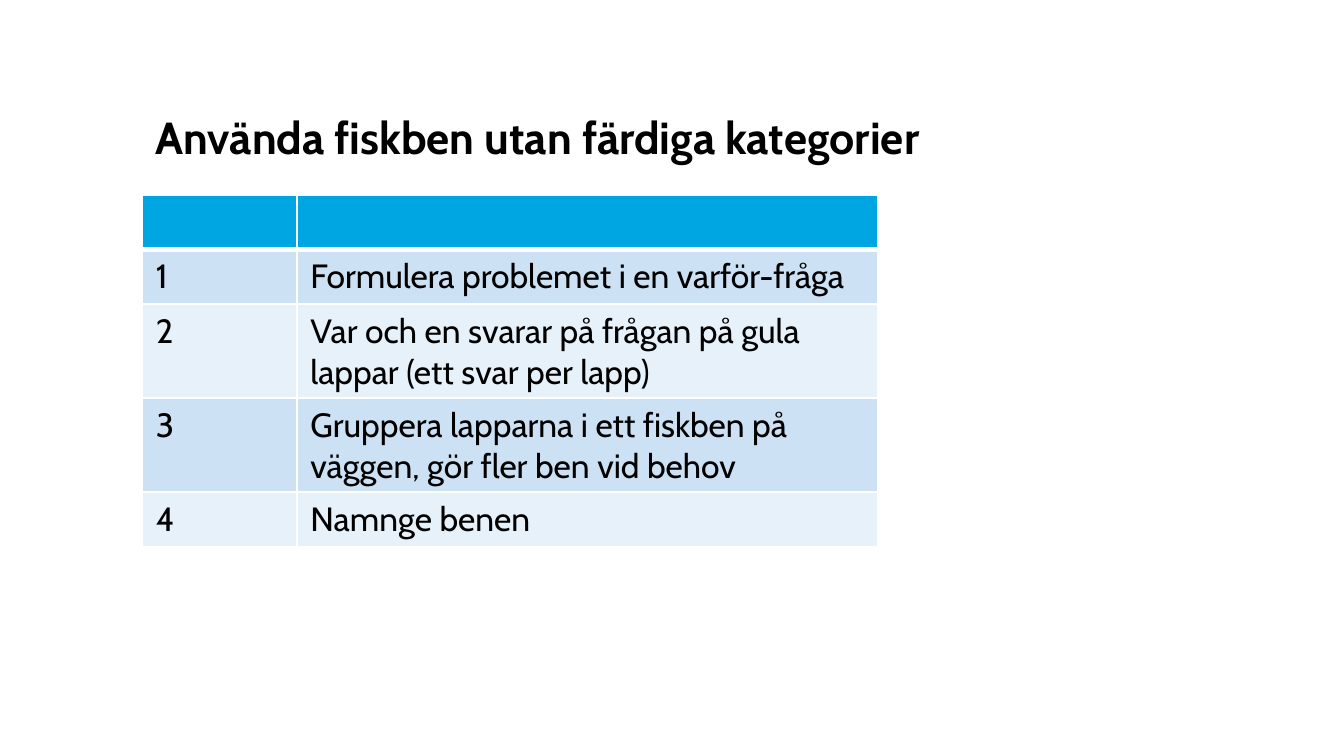
import pptx
import pptx.dml.color
import pptx.enum.text
import pptx.oxml
import pptx.oxml.ns
import pptx.util

Pt = pptx.util.Pt
RGBColor = pptx.dml.color.RGBColor

BLACK = RGBColor(0x00, 0x00, 0x00)
WHITE = RGBColor(0xFF, 0xFF, 0xFF)
HEADER_BLUE = RGBColor(0x00, 0xA6, 0xE2)
BAND_DARK = RGBColor(0xCC, 0xE1, 0xF4)
BAND_LIGHT = RGBColor(0xE7, 0xF1, 0xFA)

TITLE_FORMAT = {"name": "Cabin", "size": Pt(24), "bold": True}
CELL_FORMAT = {"name": "Cabin", "size": Pt(18), "bold": False}

LEFT = Pt(76.3)
COLUMN_WIDTHS = [Pt(82.8), Pt(311)]
ROW_HEIGHT = Pt(29.2)
STEPS = [
    "Formulera problemet i en varför-fråga",
    "Var och en svarar på frågan på gula lappar (ett svar per lapp)",
    "Gruppera lapparna i ett fiskben på väggen, gör fler ben vid behov",
    "Namnge benen",
]


def add_span(para, text, format_values):
    span = para.add_run()
    span.text = text
    for name, value in format_values.items():
        setattr(span.font, name, value)
    span.font.color.rgb = BLACK


def add_title(page, text):
    box = page.shapes.add_textbox(LEFT, Pt(58.3), Pt(561.6), Pt(40.3))
    box.text_frame.word_wrap = True
    box.text_frame.vertical_anchor = pptx.enum.text.MSO_ANCHOR.TOP
    para = box.text_frame.paragraphs[0]
    para.line_spacing = 0.9
    add_span(para, text, TITLE_FORMAT)


def add_borders(cell, widths):
    properties = cell._tc.get_or_add_tcPr()
    for position, (side, width) in enumerate(widths.items()):
        border = pptx.oxml.parse_xml(
            f'<a:{side} {pptx.oxml.ns.nsdecls("a")} w="{Pt(width)}">'
            f'<a:solidFill><a:srgbClr val="{WHITE}"/></a:solidFill></a:{side}>'
        )
        properties.insert(position, border)


def add_steps_table(page, steps):
    rows = [("", "")] + [(str(number), step) for number, step in enumerate(steps, 1)]
    frame = page.shapes.add_table(
        len(rows), len(COLUMN_WIDTHS), LEFT, Pt(104.4),
        sum(COLUMN_WIDTHS), ROW_HEIGHT * len(rows),
    )
    table = frame.table
    for column, width in zip(table.columns, COLUMN_WIDTHS):
        column.width = width
    for row_index, texts in enumerate(rows):
        band = BAND_DARK if row_index % 2 else BAND_LIGHT
        for column_index, text in enumerate(texts):
            cell = table.cell(row_index, column_index)
            cell.fill.solid()
            cell.fill.fore_color.rgb = band if row_index else HEADER_BLUE
            add_borders(cell, {
                "lnL": 1,
                "lnR": 1,
                "lnT": 3 if row_index == 1 else 1,
                "lnB": 1 if row_index else 3,
            })
            if text:
                add_span(cell.text_frame.paragraphs[0], text, CELL_FORMAT)
    frame.height = Pt(188.6)


def main():
    deck = pptx.Presentation()
    deck.slide_width = Pt(720)
    deck.slide_height = Pt(405)
    page = deck.slides.add_slide(deck.slide_layouts[6])
    add_title(page, "Använda fiskben utan färdiga kategorier")
    add_steps_table(page, STEPS)
    deck.save("out.pptx")


if __name__ == "__main__":
    main()
